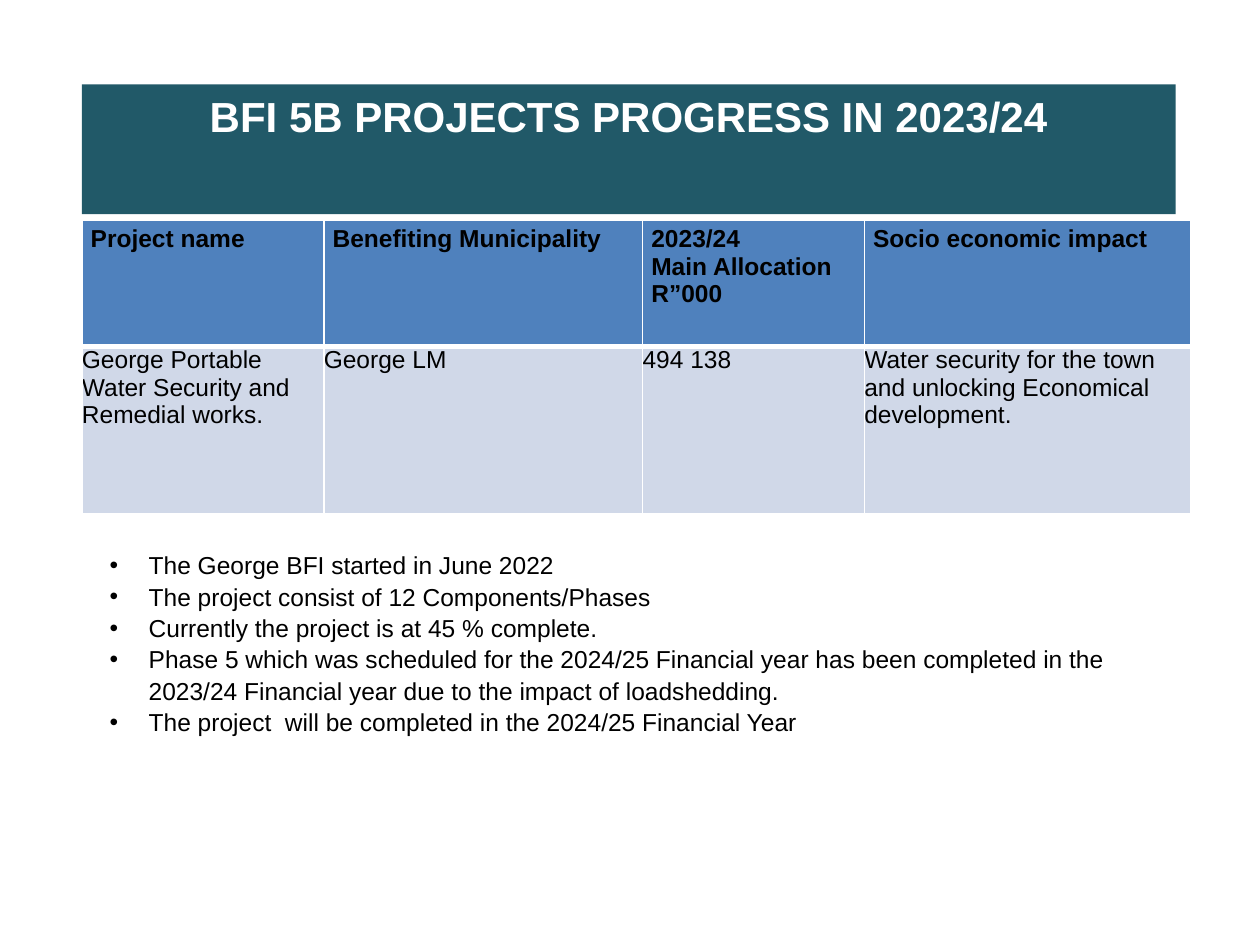
from lxml.etree import SubElement
from pptx import Presentation
from pptx.dml.color import RGBColor
from pptx.enum.text import MSO_ANCHOR, MSO_AUTO_SIZE, PP_ALIGN
from pptx.oxml.ns import qn
from pptx.util import Inches, Pt

COLORS = {
    "banner": "215968",
    "header": "4F81BD",
    "row": "D0D8E8",
    "white": "FFFFFF",
    "black": "000000",
}
HEADINGS = [
    "Project name",
    "Benefiting Municipality",
    "2023/24\nMain Allocation\nR”000",
    "Socio economic impact",
]
PROJECT = [
    "George Portable Water Security and Remedial works.",
    "George LM",
    "494 138",
    "Water security for the town and unlocking Economical development.",
]
COLUMN_WIDTHS = [1.92, 2.53, 1.76, 2.59]
ROW_HEIGHTS = [1, 1.33]
PROGRESS = [
    "The George BFI started in June 2022",
    "The project consist of 12 Components/Phases",
    "Currently the project is at 45 % complete.",
    "Phase 5 which was scheduled for the 2024/25 Financial year has been "
    "completed in the 2023/24 Financial year due to the impact of loadshedding.",
    "The project  will be completed in the 2024/25 Financial Year",
]


def color(name):
    return RGBColor.from_string(COLORS[name])


def place(shape, left, top, width, height):
    shape.left, shape.top = Inches(left), Inches(top)
    shape.width, shape.height = Inches(width), Inches(height)


def style_font(para, size, color_name="black", bold=False):
    para.font.name = "Arial"
    para.font.size = Pt(size)
    para.font.bold = bold
    para.font.color.rgb = color(color_name)


def add_title(page):
    title = page.shapes.title
    place(title, 0.65, 0.67, 8.68, 1.03)
    title.fill.solid()
    title.fill.fore_color.rgb = color("banner")
    frame = title.text_frame
    frame.text = "BFI 5B PROJECTS PROGRESS IN 2023/24"
    frame.vertical_anchor = MSO_ANCHOR.TOP
    frame.auto_size = MSO_AUTO_SIZE.NONE
    para = frame.paragraphs[0]
    para.alignment = PP_ALIGN.CENTER
    style_font(para, 24, "white", bold=True)


def set_borders(cell, bottom_width):
    """Draw white cell borders; call before filling, as lines come first in the XML."""
    properties = cell._tc.get_or_add_tcPr()
    for side, width in {"L": 1, "R": 1, "T": 1, "B": bottom_width}.items():
        line = SubElement(properties, qn(f"a:ln{side}"), w=str(Pt(width)))
        fill = SubElement(line, qn("a:solidFill"))
        SubElement(fill, qn("a:srgbClr"), val=COLORS["white"])


def fill_row(row, texts, fill, bold, insets, bottom_width):
    for cell, text in zip(row.cells, texts):
        set_borders(cell, bottom_width)
        cell.fill.solid()
        cell.fill.fore_color.rgb = color(fill)
        cell.margin_left = cell.margin_right = Inches(insets[0])
        cell.margin_top = cell.margin_bottom = Inches(insets[1])
        cell.text_frame.text = text
        for para in cell.text_frame.paragraphs:
            style_font(para, 14, bold=bold)


def add_project_table(page):
    table = page.shapes.add_table(
        len(ROW_HEIGHTS), len(COLUMN_WIDTHS), Inches(0.65), Inches(1.75),
        Inches(sum(COLUMN_WIDTHS)), Inches(sum(ROW_HEIGHTS))).table
    for column, width in zip(table.columns, COLUMN_WIDTHS):
        column.width = Inches(width)
    for row, height in zip(table.rows, ROW_HEIGHTS):
        row.height = Inches(height)
    fill_row(table.rows[0], HEADINGS, "header", True, (0.07, 0.04), 3)
    fill_row(table.rows[1], PROJECT, "row", False, (0, 0), 1)


def add_bullet(para):
    properties = para._p.get_or_add_pPr()
    properties.set("marL", str(Inches(0.31)))
    properties.set("indent", str(-Inches(0.31)))
    SubElement(properties, qn("a:buFont"), typeface="Arial")
    SubElement(properties, qn("a:buChar"), char="•")


def add_progress_list(page):
    body = page.placeholders[1]
    place(body, 0.77, 4.3, 8.62, 1.75)
    frame = body.text_frame
    frame.text = "\n".join(PROGRESS)
    frame.auto_size = MSO_AUTO_SIZE.NONE
    for para in frame.paragraphs:
        add_bullet(para)
        para.space_before = Pt(0)
        para.line_spacing = 1.07
        style_font(para, 14)


def main():
    deck = Presentation()
    deck.slide_width, deck.slide_height = Inches(10), Inches(7.5)
    page = deck.slides.add_slide(deck.slide_layouts[1])
    add_title(page)
    add_project_table(page)
    add_progress_list(page)
    deck.save("out.pptx")


if __name__ == "__main__":
    main()
